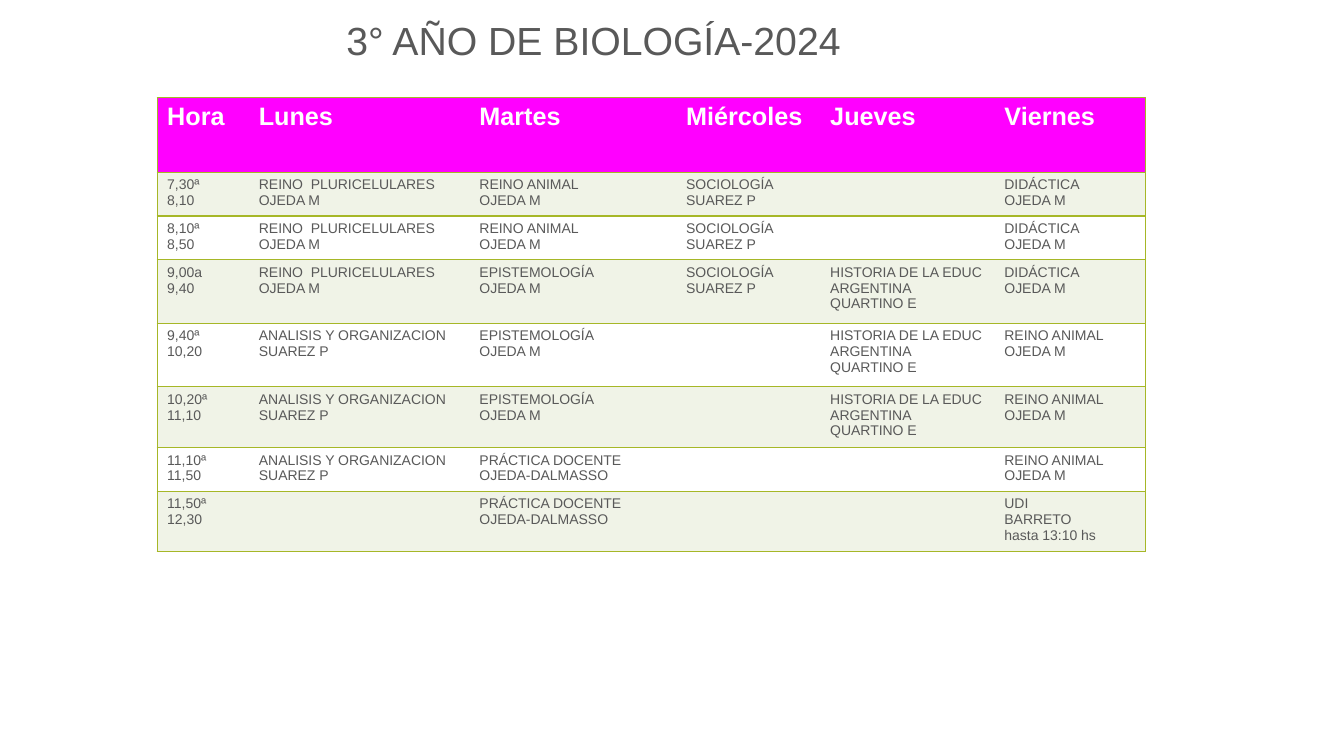
from lxml.etree import SubElement
from pptx import Presentation
from pptx.dml.color import RGBColor
from pptx.enum.text import MSO_ANCHOR
from pptx.oxml.ns import qn
from pptx.util import Cm, Pt

TITLE = "3° AÑO DE BIOLOGÍA-2024"
DAYS = ["Hora", "Lunes", "Martes", "Miércoles", "Jueves", "Viernes"]

PLURICELLULAR = "REINO  PLURICELULARES\nOJEDA M"
ANIMAL = "REINO ANIMAL\nOJEDA M"
SOCIOLOGY = "SOCIOLOGÍA\nSUAREZ P"
DIDACTICS = "DIDÁCTICA\nOJEDA M"
EPISTEMOLOGY = "EPISTEMOLOGÍA\nOJEDA M"
HISTORY = "HISTORIA DE LA EDUC ARGENTINA\nQUARTINO E"
ANALYSIS = "ANALISIS Y ORGANIZACION\nSUAREZ P"
PRACTICE = "PRÁCTICA DOCENTE\nOJEDA-DALMASSO"
UDI = "UDI\nBARRETO\nhasta 13:10 hs"

LESSONS = [
    ["7,30ª\n8,10", PLURICELLULAR, ANIMAL, SOCIOLOGY, "", DIDACTICS],
    ["8,10ª\n8,50", PLURICELLULAR, ANIMAL, SOCIOLOGY, "", DIDACTICS],
    ["9,00a\n9,40", PLURICELLULAR, EPISTEMOLOGY, SOCIOLOGY, HISTORY, DIDACTICS],
    ["9,40ª\n10,20", ANALYSIS, EPISTEMOLOGY, "", HISTORY, ANIMAL],
    ["10,20ª\n11,10", ANALYSIS, EPISTEMOLOGY, "", HISTORY, ANIMAL],
    ["11,10ª\n11,50", ANALYSIS, PRACTICE, "", "", ANIMAL],
    ["11,50ª\n12,30", "", PRACTICE, "", "", UDI],
]
DAY_WIDTHS = [2.31, 5.56, 5.21, 3.63, 4.39, 3.81]
HOUR_HEIGHTS = [1.88, 1.05, 1.05, 1.6, 1.6, 1.44, 1.05, 1.45]

GREY, WHITE, MAGENTA, PALE, GREEN = "595959", "FFFFFF", "FF00FF", "F0F3E7", "A6B727"


def color(value):
    """Turn a hex string into a colour."""
    return RGBColor.from_string(value)


def style_text(frame, size, ink, bold=False):
    """Format every run of a text frame."""
    for paragraph in frame.paragraphs:
        for run in paragraph.runs:
            run.font.name = "Arial"
            run.font.size = Pt(size)
            run.font.bold = bold
            run.font.color.rgb = color(ink)


def add_borders(cell, drawn_sides):
    """Rule the drawn sides of a cell in green and clear the others."""
    properties = cell._tc.get_or_add_tcPr()
    for side in "LRTB":
        line = SubElement(properties, qn(f"a:ln{side}"), w=str(Pt(1)))
        if side in drawn_sides:
            fill = SubElement(line, qn("a:solidFill"))
            SubElement(fill, qn("a:srgbClr"), val=GREEN)
        else:
            SubElement(line, qn("a:noFill"))


def add_title(slide):
    """Write the heading above the timetable."""
    frame = slide.shapes.add_textbox(Cm(8.48), Cm(0.18), Cm(25), Cm(1.55)).text_frame
    frame.word_wrap = True
    frame.vertical_anchor = MSO_ANCHOR.BOTTOM
    frame.text = TITLE
    frame.paragraphs[0].line_spacing = 0.9
    style_text(frame, 28, GREY)


def add_timetable(slide):
    """Build the weekly timetable."""
    rows = [DAYS] + LESSONS
    timetable = slide.shapes.add_table(
        len(rows), len(DAYS), Cm(3.96), Cm(2.46),
        Cm(sum(DAY_WIDTHS)), Cm(sum(HOUR_HEIGHTS))).table
    for column, width in zip(timetable.columns, DAY_WIDTHS):
        column.width = Cm(width)
    for row, height in zip(timetable.rows, HOUR_HEIGHTS):
        row.height = Cm(height)

    edges = {0: "LTB", len(DAYS) - 1: "RTB"}
    for hour, row in enumerate(rows):
        heading = hour == 0
        band = MAGENTA if heading else PALE if hour % 2 else WHITE
        for day, lesson in enumerate(row):
            cell = timetable.cell(hour, day)
            add_borders(cell, edges.get(day, "TB"))
            cell.fill.solid()
            cell.fill.fore_color.rgb = color(band)
            cell.text_frame.text = lesson
            style_text(cell.text_frame, 18 if heading else 10,
                       WHITE if heading else GREY, heading)


def main():
    """Save the one-slide timetable."""
    deck = Presentation()
    deck.slide_width, deck.slide_height = Cm(33.87), Cm(19.05)
    slide = deck.slides.add_slide(deck.slide_layouts[6])
    add_title(slide)
    add_timetable(slide)
    deck.save("out.pptx")


if __name__ == "__main__":
    main()
